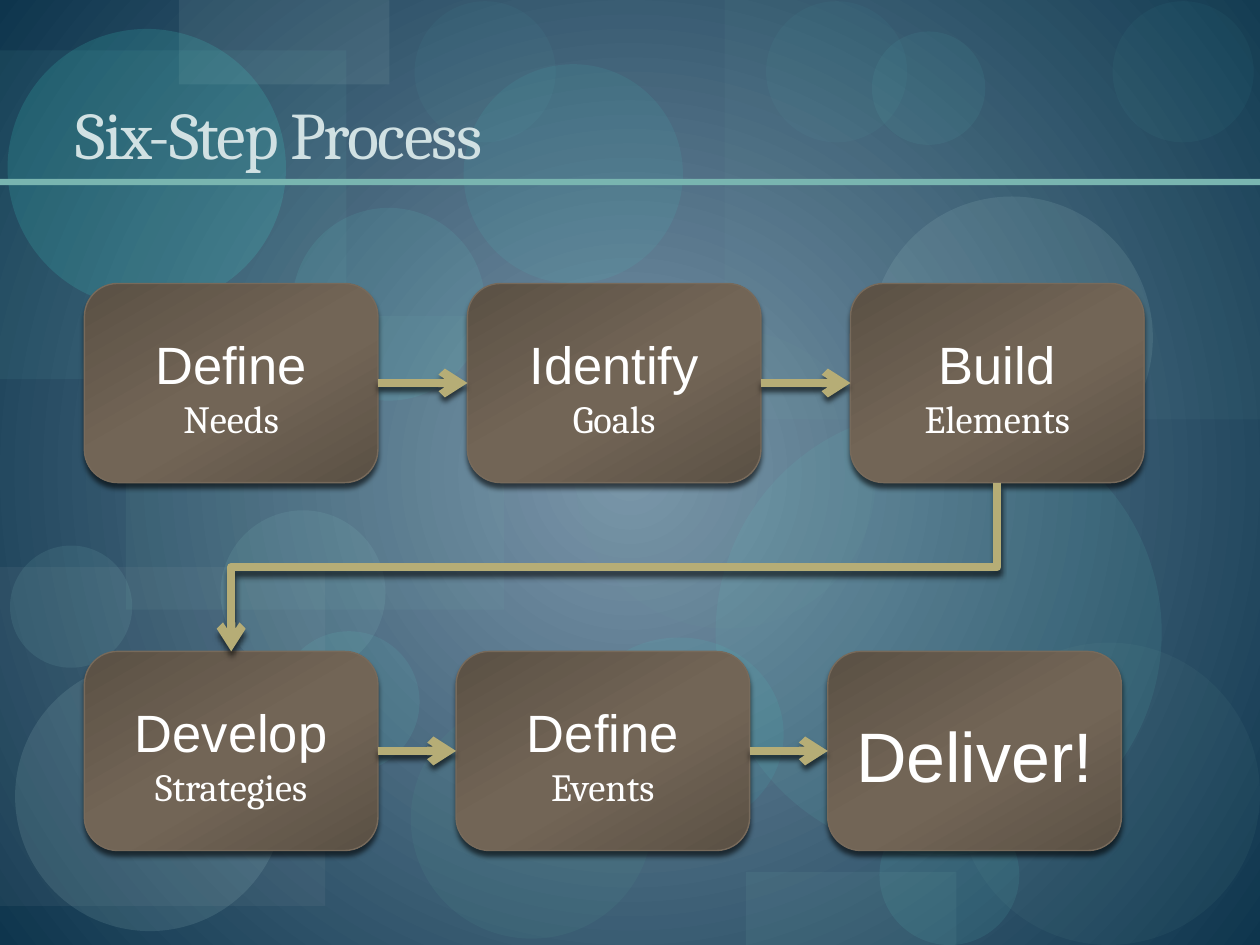
from dataclasses import dataclass

from lxml import etree
from pptx import Presentation
from pptx import util as u
from pptx.dml.color import RGBColor
from pptx.enum import shapes, text
from pptx.oxml.ns import qn


@dataclass(frozen=True)
class Theme:
    head: str = "Cambria"
    body: str = "Arial"
    title: str = "D1E1E3"
    white: str = "FFFFFF"
    bar: str = "79B5B0"
    edge: str = "776A5B"
    arrow: str = "B6AD76"
    back: tuple = ((0, "7B96AA"), (100, "0E354D"))
    card: tuple = ((0, "5A5044"), (48, "726556"), (58, "726556"), (100, "5A5044"))
    big: int = 40
    top: int = 38
    mid: int = 30
    low: int = 22


T = Theme()
WIDE, HIGH = 10, 7.5
KIND = shapes.MSO_SHAPE
LINK = shapes.MSO_CONNECTOR

# Backdrop: oval or rectangle, left, top, width, height, colour, opacity %
DECOR = [
    ("r", 1, 2.51, 3, 2.33, "79B5B0", 9), ("o", 3.26, 5.55, 1.92, 1.9, "549791", 13),
    ("r", 5.75, 0, 4.25, 3.33, "79B5B0", 6), ("r", 0, 4.5, 2.58, 2.69, "B2B7BA", 8),
    ("o", 4.57, 2.61, 2.38, 2.38, "70A39E", 8), ("o", 6.98, 6.39, 1.11, 1.11, "65E8DC", 9),
    ("o", 6.91, 1.56, 2.24, 2.24, "C1E8E4", 11), ("o", 0.12, 5.25, 2.14, 2.14, "C1E8E4", 12),
    ("o", 2.21, 5.01, 1.12, 1.12, "65E8DC", 9), ("o", 4.56, 5.06, 1.66, 1.53, "44EADC", 8),
    ("r", 0, 0.4, 2.75, 2.61, "77D6CE", 7), ("r", 1.42, 0, 1.67, 0.67, "BED7D4", 10),
    ("o", 0.06, 0.23, 2.21, 2.21, "44EADC", 15), ("o", 0.08, 4.33, 0.97, 0.97, "97DCD6", 10),
    ("o", 2.32, 1.65, 1.53, 1.53, "65E8DC", 9), ("o", 3.68, 0.51, 1.74, 1.74, "44EADC", 8),
    ("o", 5.68, 3.25, 3.54, 3.54, "61CDC4", 10), ("o", 6.08, 0.01, 1.12, 1.12, "65E8DC", 4),
    ("o", 7.6, 5.1, 2.4, 2.4, "70A39E", 8), ("o", 1.75, 4.05, 1.31, 1.31, "97DCD6", 10),
    ("o", 6.92, 0.25, 0.9, 0.9, "65E8DC", 6), ("o", 8.83, 0.01, 1.12, 1.12, "65E8DC", 4),
    ("r", 5.92, 6.92, 1.67, 0.58, "79B5B0", 10), ("o", 3.29, 0.01, 1.12, 1.12, "65E8DC", 4),
]
STEPS = [
    [("Define", "Needs"), ("Identify", "Goals"), ("Build", "Elements")],
    [("Develop", "Strategies"), ("Define", "Events"), ("Deliver!",)],
]


def rgb(code):
    return RGBColor.from_string(code)


def sub(node, tag, **attrs):
    return etree.SubElement(node, qn(tag), {k: str(v) for k, v in attrs.items()})


def blend(node, stops):
    """Set the gradient's stops; return its element for the direction."""
    for child in list(node):
        node.remove(child)
    group = sub(node, "a:gsLst")
    for pos, code in stops:
        stop = sub(group, "a:gs", pos=pos * 1000)
        sub(stop, "a:srgbClr", val=code)
    return node


def shade(effects):
    cast = sub(effects, "a:outerShdw", blurRad=u.Pt(3), dist=u.Pt(3),
               dir=5400000, algn="ctr", rotWithShape=0)
    sub(sub(cast, "a:srgbClr", val="000000"), "a:alpha", val=60000)


def write(para, words, size, font=T.body, color=T.white, align=None, track=None):
    run = para.add_run()
    run.text = words
    run.font.size, run.font.name = u.Pt(size), font
    run.font.color.rgb = rgb(color)
    para.alignment = align
    if track:
        run.font._element.set("spc", str(track * 100))


def form(slide, kind, box):
    shape = slide.shapes.add_shape(kind, *map(u.Inches, box))
    shape.shadow.inherit = False
    return shape


def paint(slide, kind, box, color, alpha=100):
    shape = form(slide, kind, box)
    shape.fill.solid()
    shape.fill.fore_color.rgb = rgb(color)
    shape.line.fill.background()
    if alpha < 100:
        tone = shape.element.spPr.find(qn("a:solidFill"))[0]
        sub(tone, "a:alpha", val=alpha * 1000)


def scene(slide):
    # Radial background, pale shapes and the rule below the title
    slide.background.fill.gradient()
    grad = blend(slide.element.xpath(".//p:bgPr/a:gradFill")[0], T.back)
    way = sub(grad, "a:path", path="circle")
    sub(way, "a:fillToRect", l=50000, t=50000, r=50000, b=50000)
    for mark, *box, color, alpha in DECOR:
        kind = KIND.OVAL if mark == "o" else KIND.RECTANGLE
        paint(slide, kind, box, color, alpha)
    paint(slide, KIND.RECTANGLE, (0, 1.42, WIDE, 0.05), T.bar)


def head(slide, box, words):
    title = slide.shapes.title
    title.left, title.top, title.width, title.height = map(u.Inches, box)
    frame = title.text_frame
    frame.vertical_anchor = text.MSO_ANCHOR.BOTTOM
    write(frame.paragraphs[0], words, T.top, T.head, T.title,
          text.PP_ALIGN.LEFT, track=-1)
    slide.shapes.element.append(title.element)  # in front of the backdrop


def card(slide, box, lines):
    shape = form(slide, KIND.ROUNDED_RECTANGLE, box)
    shape.fill.gradient()
    grad = blend(shape.element.spPr.find(qn("a:gradFill")), T.card)
    sub(grad, "a:lin", ang=3600000, scaled=0)
    shape.line.color.rgb = rgb(T.edge)
    shape.line.width = u.Pt(0.79)
    shade(shape.element.spPr.find(qn("a:effectLst")))
    frame = shape.text_frame
    frame.word_wrap = True
    frame.vertical_anchor = text.MSO_ANCHOR.MIDDLE
    frame.margin_top = u.Inches(0.1)
    mid = text.PP_ALIGN.CENTER
    lead = T.mid if len(lines) > 1 else T.big
    write(frame.paragraphs[0], lines[0], lead, align=mid)
    for line in lines[1:]:
        write(frame.add_paragraph(), line, T.low, T.head, align=mid)
    return shape


def join(slide, kind, start, out, end, into):
    link = slide.shapes.add_connector(kind, 0, 0, 0, 0)
    link.begin_connect(start, out)
    link.end_connect(end, into)
    link.line.color.rgb = rgb(T.arrow)
    link.line.width = u.Pt(4.72)
    line = link.line._get_or_add_ln()
    sub(line, "a:round")
    sub(line, "a:tailEnd", type="arrow")
    shade(sub(link.element.spPr, "a:effectLst"))
    return link


def turn(link):
    """Make an elbow leave downwards: a quarter turn about its own centre."""
    x, y, w, h = link.left, link.top, link.width, link.height
    link.left, link.top = x + (w - h) // 2, y + (h - w) // 2
    link.width, link.height = h, w
    frame = link.element.spPr.find(qn("a:xfrm"))
    for flip in ("flipH", "flipV"):
        frame.attrib.pop(flip, None)
    frame.set("rot", "5400000")


def flow(slide, box, gaps, size):
    # Two rows of cards, each row with its own gap
    left, top, _, high = box
    wide, tall = size
    rows = []
    for r, (steps, gap) in enumerate(zip(STEPS, gaps)):
        y = top + r * (high - tall)
        rows.append([card(slide, (left + c * (wide + gap), y, wide, tall), lines)
                     for c, lines in enumerate(steps)])
    # Arrows along each row, then from the first row to the second
    for row in rows:
        for a, b in zip(row, row[1:]):
            join(slide, LINK.STRAIGHT, a, 3, b, 1)
    turn(join(slide, LINK.ELBOW, rows[0][-1], 2, rows[1][0], 0))


def main():
    deck = Presentation()
    deck.slide_width, deck.slide_height = u.Inches(WIDE), u.Inches(HIGH)
    slide = deck.slides.add_slide(deck.slide_layouts[5])
    scene(slide)
    head(slide, (0.05 * WIDE, 0.17, 0.9 * WIDE, HIGH / 6), "Six-Step Process")
    flow(slide, (0.67, 0.3 * HIGH, 8.41, 0.6 * HIGH), (0.71, 0.62), (2.33, 1.58))
    deck.save("out.pptx")


if __name__ == "__main__":
    main()
